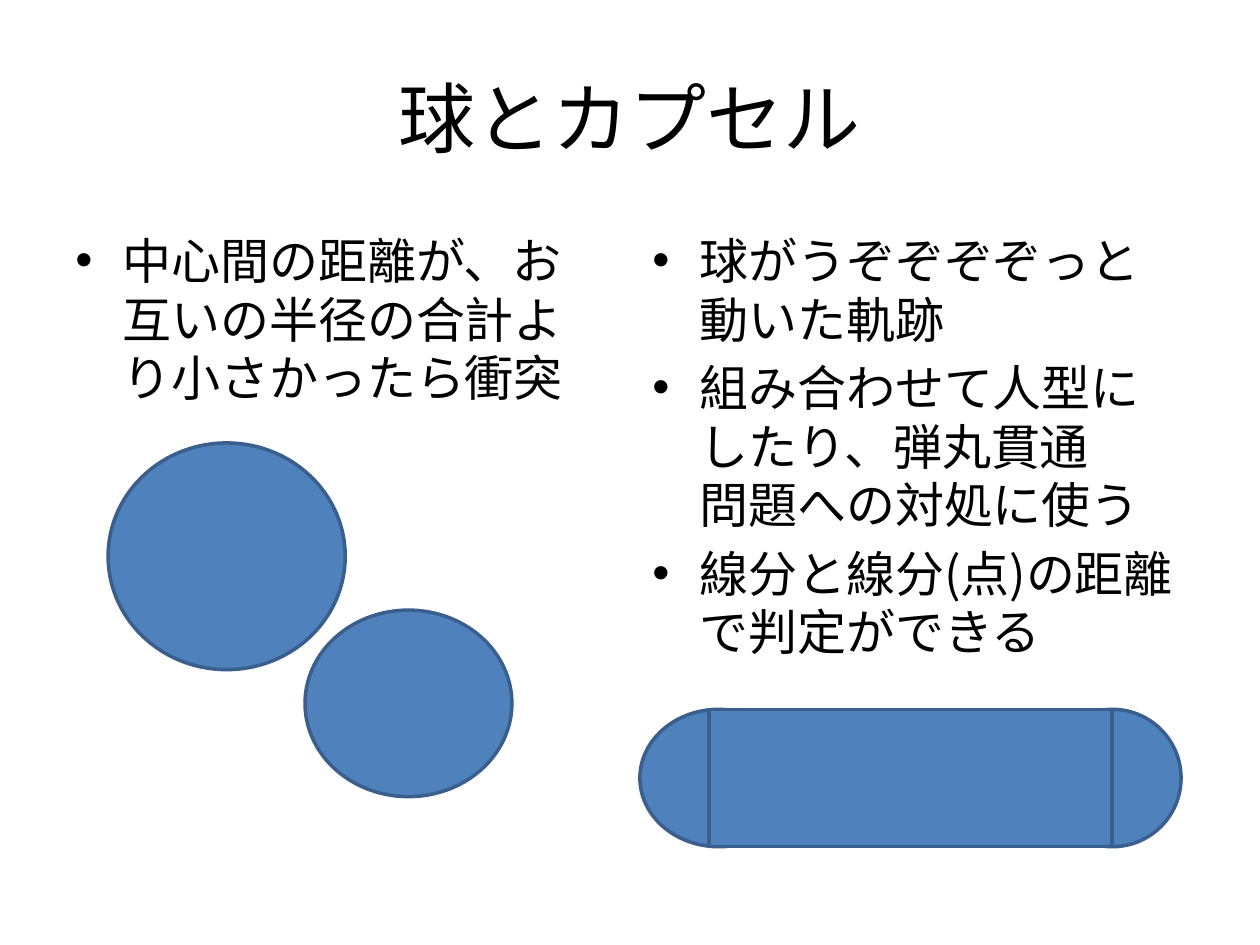
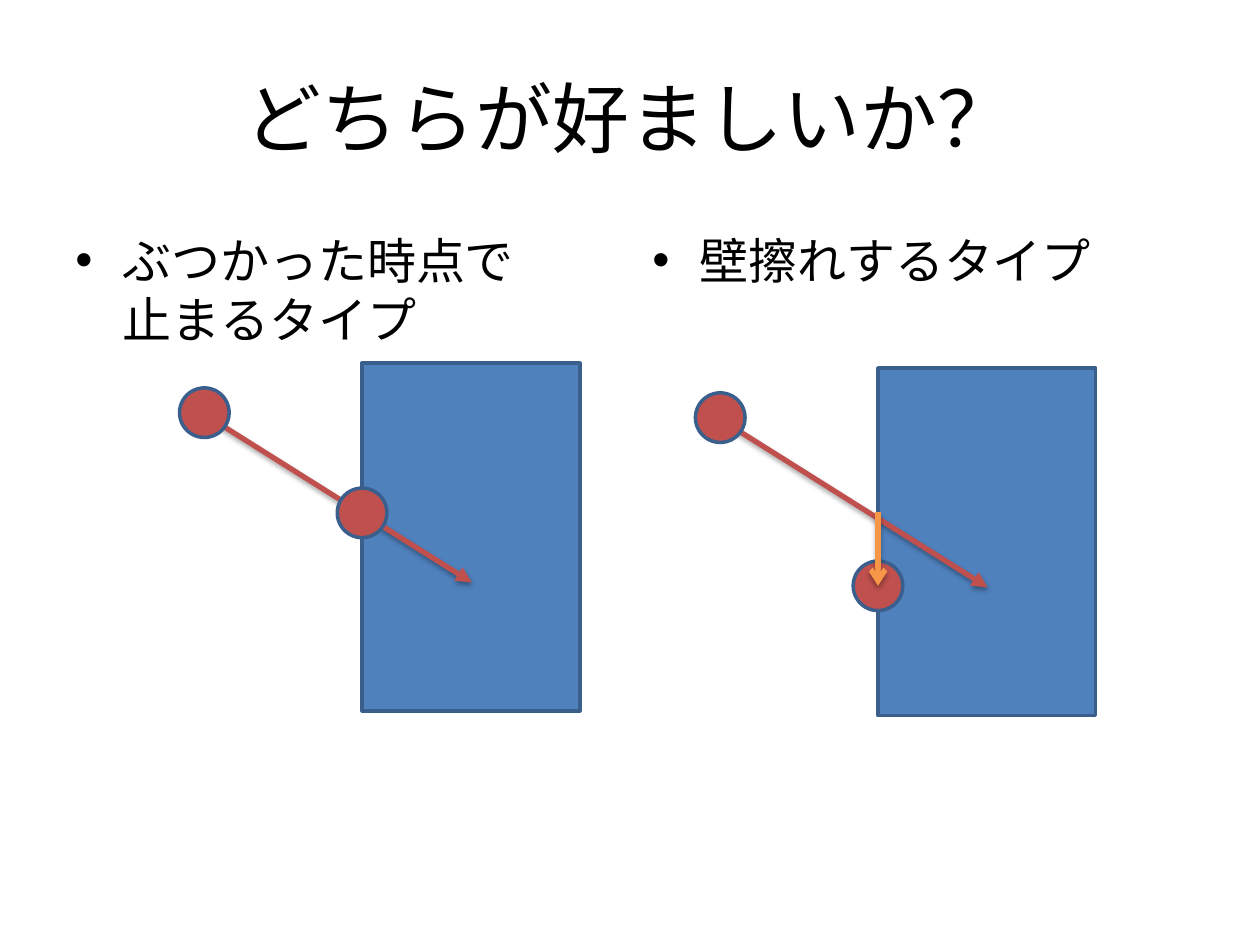
from lxml.etree import SubElement
from pptx import Presentation
from pptx.dml.color import RGBColor
from pptx.enum.shapes import MSO_CONNECTOR, MSO_SHAPE as Shape
from pptx.enum.text import MSO_ANCHOR as Anchor, PP_ALIGN as Align
from pptx.oxml.ns import qn
from pptx.util import Cm, Pt

# Shared look
FONT = "Noto Sans CJK JP"
BLACK = RGBColor(0x00, 0x00, 0x00)
BLUE = RGBColor(0x4F, 0x81, 0xBD)
OUTLINE = RGBColor(0x3A, 0x5F, 0x8C)
RED = RGBColor(0xC0, 0x50, 0x4D)
ORANGE = RGBColor(0xF7, 0x96, 0x46)

MARGIN = 1.27
COLUMN_LEFTS = (MARGIN, 12.9)
COLUMN_TOP, COLUMN_WIDTH, COLUMN_HEIGHT = 4.45, 11.22, 12.57
INDENT = 0.95
BALL = 1.0


def place(item, left, top, width, height):
    item.left, item.top = Cm(left), Cm(top)
    item.width, item.height = Cm(width), Cm(height)


def style_runs(para, size):
    for span in para.runs:
        span.font.size = Pt(size)
        span.font.name = FONT
        span.font.color.rgb = BLACK
        SubElement(span.font._element, qn("a:ea"), typeface=FONT)


def add_page(deck, title):
    page = deck.slides.add_slide(deck.slide_layouts[5])
    place(page.shapes.title, MARGIN, 0.76, 22.86, 3.18)
    frame = page.shapes.title.text_frame
    frame.text = title
    frame.vertical_anchor = Anchor.MIDDLE
    frame.paragraphs[0].alignment = Align.CENTER
    style_runs(frame.paragraphs[0], 44)
    return page


def add_bullets(page, left, items):
    box = page.shapes.add_textbox(Cm(left), Cm(COLUMN_TOP), Cm(COLUMN_WIDTH), Cm(COLUMN_HEIGHT))
    frame = box.text_frame
    frame.word_wrap = True
    frame.margin_top = Cm(0.2)
    for index, item in enumerate(items):
        para = frame.add_paragraph() if index else frame.paragraphs[0]
        para.text = item
        para.line_spacing = Pt(33.5)
        para.space_before = Pt(5.6)
        style_runs(para, 28)
        # Hanging bullet
        props = para._p.get_or_add_pPr()
        props.set("marL", str(Cm(INDENT)))
        props.set("indent", str(-Cm(INDENT)))
        SubElement(props, qn("a:buFont"), typeface="Arial")
        SubElement(props, qn("a:buChar"), char="•")


def add_columns(page, *columns):
    for left, items in zip(COLUMN_LEFTS, columns):
        add_bullets(page, left, items)


def add_figure(page, kind, left, top, width, height, fill=BLUE):
    figure = page.shapes.add_shape(kind, Cm(left), Cm(top), Cm(width), Cm(height))
    figure.shadow.inherit = False
    figure.fill.solid()
    figure.fill.fore_color.rgb = fill
    figure.line.color.rgb = OUTLINE
    figure.line.width = Pt(2)


def add_ball(page, x, y):
    """Draw a red ball centred on (x, y)."""
    add_figure(page, Shape.OVAL, x - BALL / 2, y - BALL / 2, BALL, BALL, RED)


def add_arrow(page, start, end, color, head):
    arrow = page.shapes.add_connector(
        MSO_CONNECTOR.STRAIGHT, *(Cm(value) for value in (*start, *end)))
    arrow.line.color.rgb = color
    arrow.line.width = Pt(3)
    SubElement(arrow.line._get_or_add_ln(), qn("a:tailEnd"), type=head)
    # Soft shadow straight below
    effects = SubElement(arrow._element.spPr, qn("a:effectLst"))
    shadow = SubElement(effects, qn("a:outerShdw"), blurRad=str(Pt(3.1)),
                        dist=str(Pt(1.8)), dir="5400000", rotWithShape="0")
    tint = SubElement(shadow, qn("a:srgbClr"), val="000000")
    SubElement(tint, qn("a:alpha"), val="35000")


def add_wall_scene(page, left, top, stop):
    """Draw a ball flying into a wall and resting `stop` below its top."""
    add_figure(page, Shape.RECTANGLE, left, top, 4.39, 7.01)
    add_arrow(page, (left - 3.2, top + 1.02), (left + 2.21, top + 4.42), RED, "triangle")
    add_ball(page, left - 3.18, top + 1)
    add_ball(page, left, top + stop)


def build_sphere_page(deck):
    page = add_page(deck, "球とカプセル")
    add_columns(
        page,
        ["中心間の距離が、お互いの半径の合計より小さかったら衝突"],
        ["球がうぞぞぞぞっと動いた軌跡",
         "組み合わせて人型にしたり、弾丸貫通\n問題への対処に使う",
         "線分と線分(点)の距離で判定ができる"])
    # Two spheres
    add_figure(page, Shape.OVAL, 2.18, 8.93, 4.78, 4.57)
    add_figure(page, Shape.OVAL, 6.15, 12.3, 4.17, 3.76)
    # Capsule: two round ends under a straight body
    top, height = 14.3, 2.77
    add_figure(page, Shape.OVAL, 12.9, top, 3.18, height)
    add_figure(page, Shape.OVAL, 21.04, top, height, height)
    add_figure(page, Shape.RECTANGLE, 14.29, top, 8.13, height)


def build_wall_page(deck):
    page = add_page(deck, "どちらが好ましいか？")
    add_columns(page, ["ぶつかった時点で\n止まるタイプ"], ["壁擦れするタイプ"])
    # Stops where it hits
    add_wall_scene(page, 7.3, 7.32, 3.02)
    # Slides down along the wall
    left, top, stop = 17.7, 7.42, 4.39
    add_wall_scene(page, left, top, stop)
    add_arrow(page, (left, top + 2.9), (left, top + stop), ORANGE, "arrow")


def main():
    deck = Presentation()
    deck.slide_width, deck.slide_height = Cm(25.4), Cm(19.05)
    build_sphere_page(deck)
    build_wall_page(deck)
    deck.save("out.pptx")


if __name__ == "__main__":
    main()
